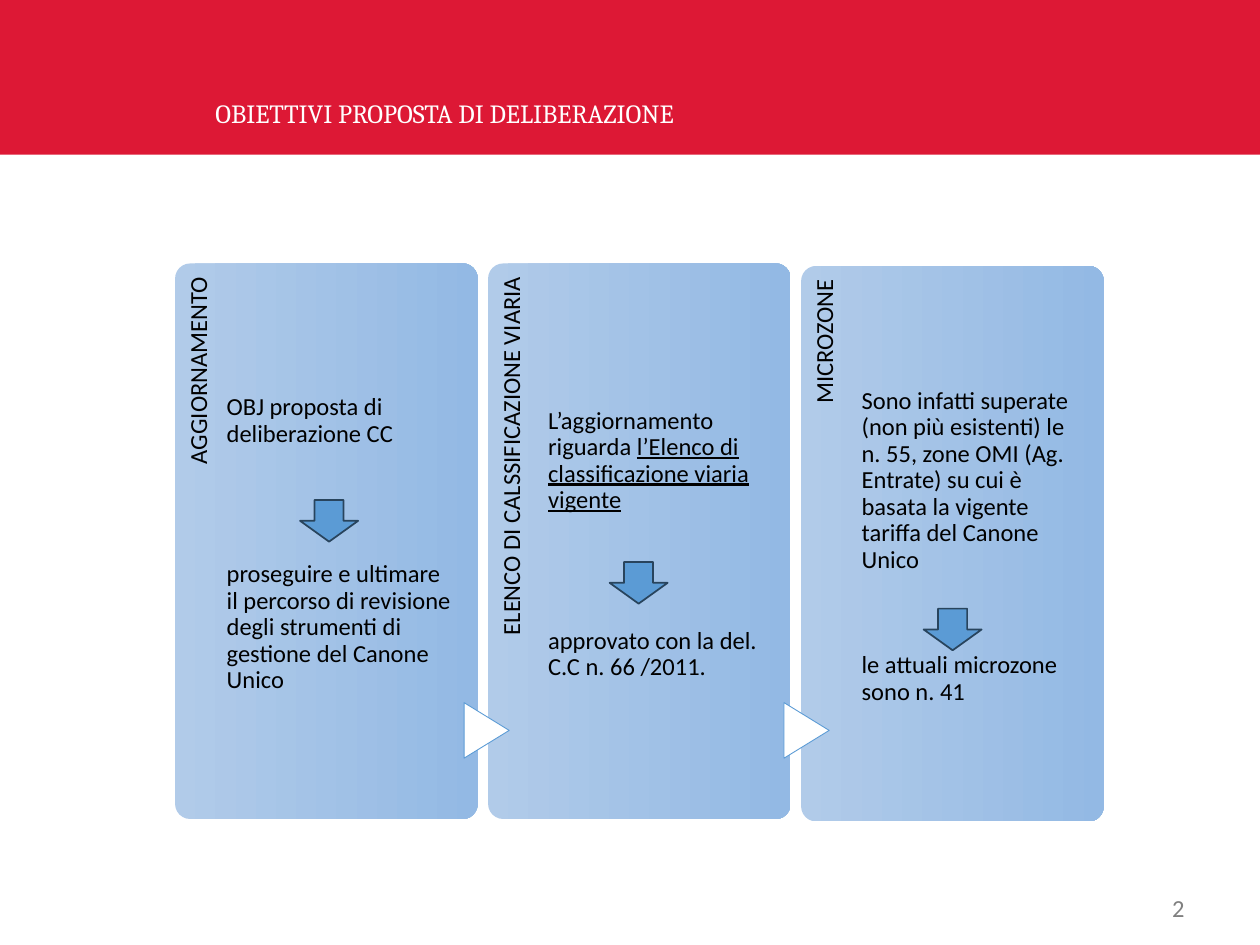
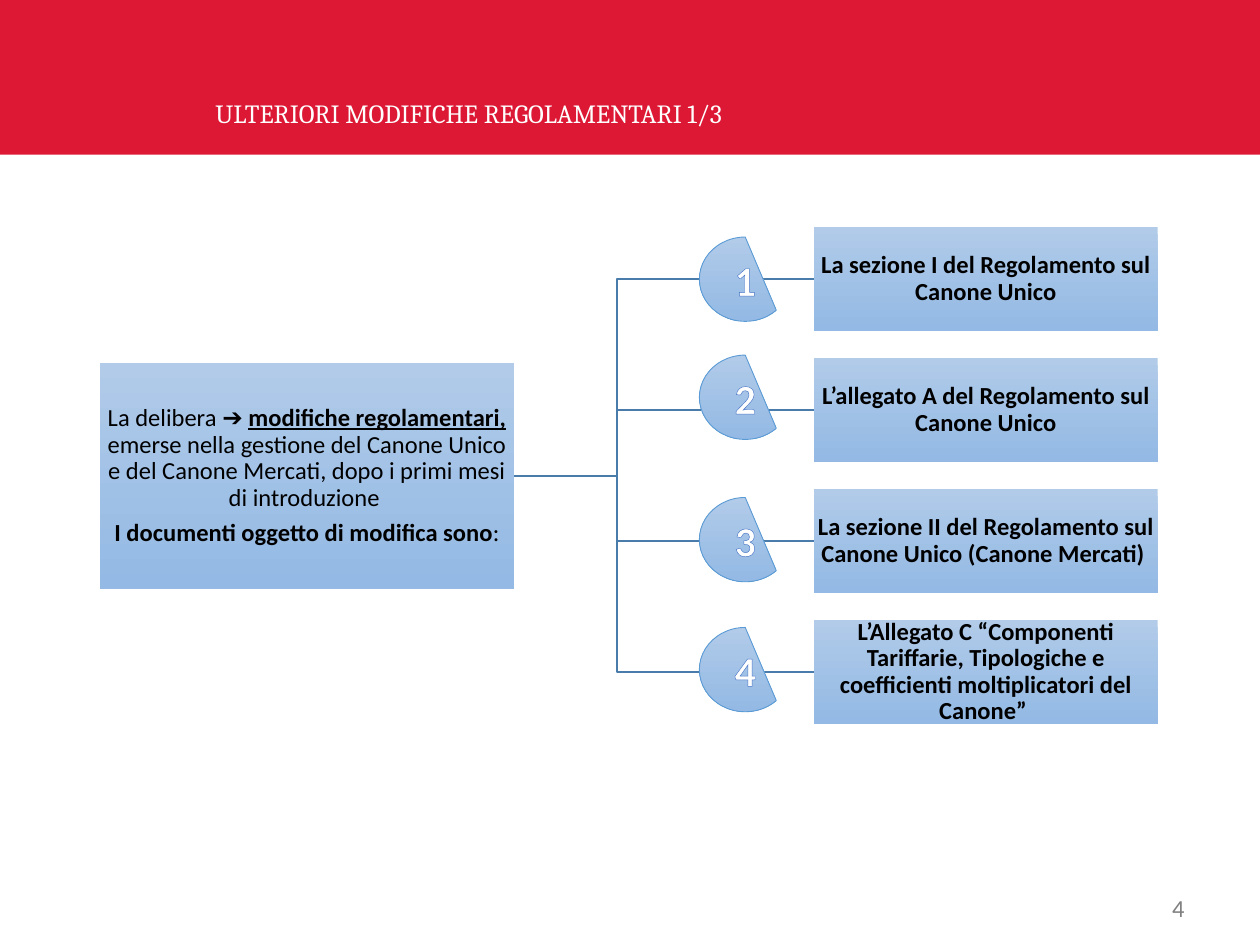
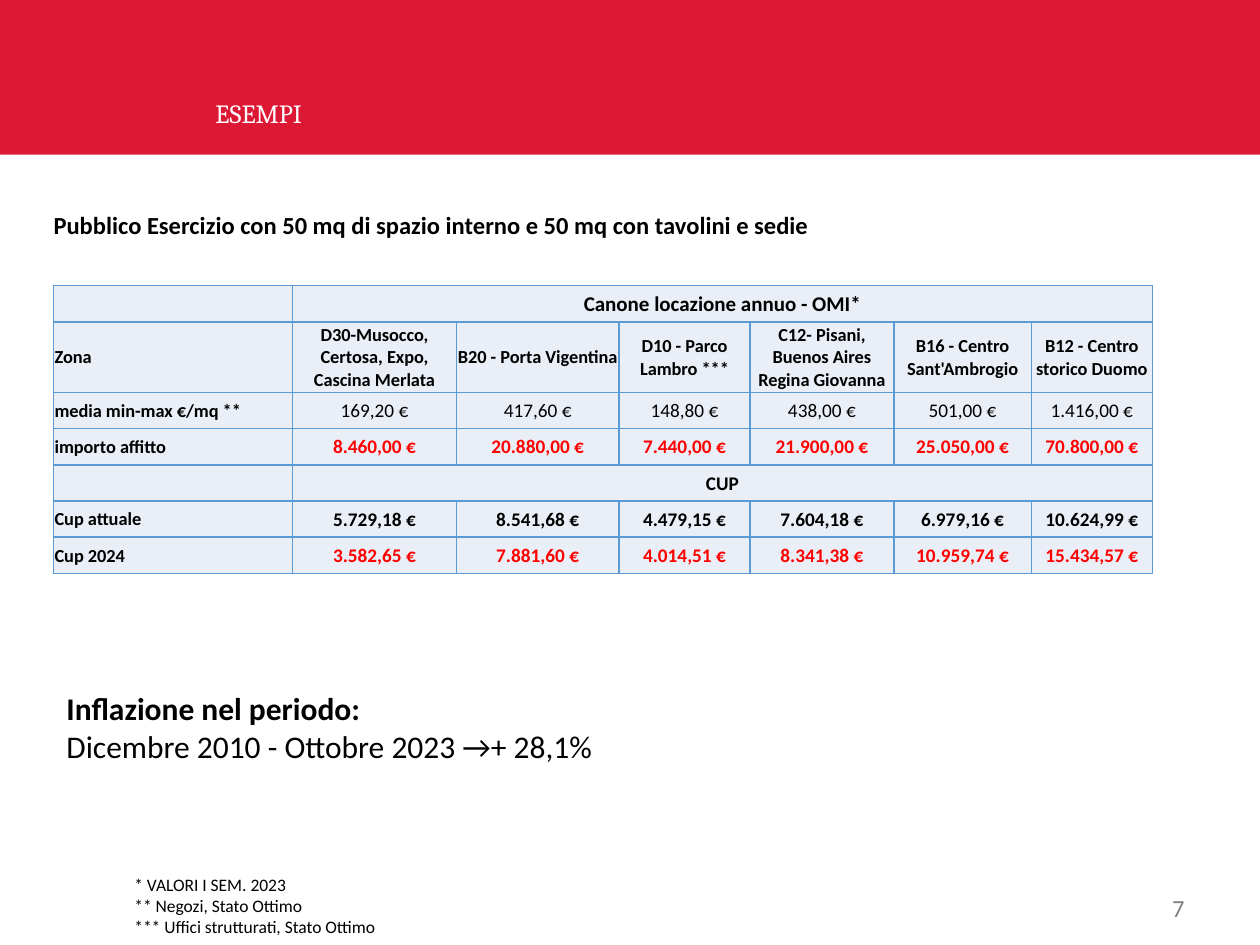
from dataclasses import dataclass, field
from typing import Any, NamedTuple

from lxml.etree import SubElement
from pptx import Presentation
from pptx.dml.color import RGBColor
from pptx.enum.shapes import MSO_CONNECTOR, MSO_SHAPE
from pptx.enum.text import MSO_ANCHOR, MSO_AUTO_SIZE, PP_ALIGN
from pptx.oxml import parse_xml
from pptx.oxml.ns import nsdecls, qn
from pptx.util import Cm, Pt

RED = RGBColor(0xDD, 0x18, 0x35)
ALERT = RGBColor(0xFF, 0x00, 0x00)
WHITE = RGBColor(0xFF, 0xFF, 0xFF)
BLACK = RGBColor(0x00, 0x00, 0x00)
GREY = RGBColor(0x80, 0x80, 0x80)
BLUE = RGBColor(0x5B, 0x9B, 0xD5)
NAVY = RGBColor(0x28, 0x44, 0x5D)
STEEL = RGBColor(0x49, 0x7C, 0xAB)
PALE = RGBColor(0xEA, 0xEF, 0xF7)
LIGHT = RGBColor(0xB1, 0xCB, 0xE9)
DEEP = RGBColor(0x93, 0xB9, 0xE4)
RIM = RGBColor(0x44, 0x72, 0xC4)

LINE = 15.2  # height in points of one 14 pt line at 0.9 spacing
GAP = 4.9    # points between paragraphs in the diagrams
BOLD = {"bold": True}

Runs = list[tuple[str, dict[str, Any]]]


class Box(NamedTuple):
    """A frame in centimetres."""
    x: float
    y: float
    w: float
    h: float

    def cm(self) -> tuple[Cm, ...]:
        return tuple(Cm(side) for side in self)


@dataclass
class Panel:
    name: str
    top: float
    left: float
    head: Runs
    tail: str
    blanks: int
    arrow: tuple[float, float]


@dataclass
class Branch:
    text: str
    top: float


@dataclass
class Row:
    label: str
    cells: list[str]
    form: dict[str, Any] = field(default_factory=dict)
    high: float = 0.73


PANELS = [
    Panel("AGGIORNAMENTO", 5.31, 4.57,
          [("OBJ proposta di deliberazione CC", {})],
          "proseguire e ultimare il percorso di revisione degli strumenti di "
          "gestione del Canone Unico", 3, (6.05, 10.08)),
    Panel("ELENCO DI CALSSIFICAZIONE VIARIA", 5.31, 11.05,
          [("L’aggiornamento riguarda ", {}),
           ("l’Elenco di classificazione viaria vigente", {"underline": True})],
          "approvato con la del. C.C n. 66 /2011.", 3, (12.29, 11.33)),
    Panel("MICROZONE", 5.36, 17.37,
          [("Sono infatti superate (non più esistenti) le n. 55, zone OMI "
            "(Ag. Entrate) su cui è basata la vigente tariffa del Canone Unico", {})],
          "le attuali microzone sono n. 41", 2, (18.62, 12.27)),
]

ROOT: list[Runs] = [
    [("La delibera ➔ ", {}),
     ("modifiche regolamentari,", {"bold": True, "underline": True}),
     (" emerse nella gestione del Canone Unico e del Canone Mercati, "
      "dopo i primi mesi di introduzione ", {})],
    [("I documenti oggetto di modifica sono", BOLD), (":", {})],
]

BRANCHES = [
    Branch("La sezione I del Regolamento sul Canone Unico", 4.78),
    Branch("L’allegato A del Regolamento sul Canone Unico", 7.16),
    Branch("La sezione II del Regolamento sul Canone Unico (Canone Mercati) ", 10.03),
    Branch("L’Allegato C “Componenti Tariffarie, Tipologiche e coefficienti "
           "moltiplicatori del Canone” ", 12.65),
]

HOT = {"size": Pt(11), "bold": True, "color": ALERT}
ROWS = [
    Row("", ["Canone locazione annuo - OMI*"], {"size": Pt(12), "bold": True}),
    Row("Zona", ["D30-Musocco, Certosa, Expo, Cascina Merlata", "B20 - Porta Vigentina",
                 "D10 - Parco Lambro ***", "C12- Pisani, Buenos Aires Regina Giovanna",
                 "B16 - Centro Sant'Ambrogio", "B12 - Centro storico Duomo"],
        {"size": Pt(10.5), "bold": True}, 1.42),
    Row("media min-max €/mq **", ["169,20 €", "417,60 €", "148,80 €", "438,00 €",
                                  "501,00 €", "1.416,00 €"], {"size": Pt(11)}),
    Row("importo affitto", ["8.460,00 €", "20.880,00 €", "7.440,00 €", "21.900,00 €",
                            "25.050,00 €", "70.800,00 €"], HOT),
    Row("", ["CUP"], {"size": Pt(11), "bold": True}),
    Row("Cup attuale", ["5.729,18 €", "8.541,68 €", "4.479,15 €", "7.604,18 €",
                        "6.979,16 €", "10.624,99 €"], {"size": Pt(11), "bold": True}),
    Row("Cup 2024", ["3.582,65 €", "7.881,60 €", "4.014,51 €", "8.341,38 €",
                     "10.959,74 €", "15.434,57 €"], HOT),
]
WIDTHS = [4.82, 3.3, 3.28, 2.64, 2.9, 2.77, 2.44]


def put(item: Any, values: dict[str, Any]) -> None:
    """Set attributes from a dict; a color goes to the item's color.rgb."""
    for key, value in values.items():
        if key == "color":
            item.color.rgb = value
        else:
            setattr(item, key, value)


def write(frame: Any, paras: list[Runs], form: dict[str, Any] | None = None,
          para: dict[str, Any] | None = None, gap: float = 0) -> None:
    """Fill a frame; gap is the space in points before each later paragraph."""
    base = {"name": "Calibri", "size": Pt(14), "color": BLACK} | (form or {})
    for num, runs in enumerate(paras):
        line = frame.add_paragraph() if num else frame.paragraphs[0]
        put(line, {"alignment": PP_ALIGN.LEFT} | (para or {}))
        if num and gap:
            line.space_before = Pt(gap)
        for text, extra in runs:
            run = line.add_run()
            run.text = text
            put(run.font, base | extra)


def inset(frame: Any, left: float, top: float, right: float, low: float) -> None:
    put(frame, {"margin_left": Cm(left), "margin_top": Cm(top),
                "margin_right": Cm(right), "margin_bottom": Cm(low)})


def label(slide: Any, box: Box, anchor: Any = MSO_ANCHOR.TOP) -> Any:
    """Add a wrapping text box and return its frame."""
    frame = slide.shapes.add_textbox(*box.cm()).text_frame
    put(frame, {"word_wrap": True, "vertical_anchor": anchor})
    return frame


def shape(slide: Any, kind: Any, box: Box, fill: RGBColor | None = None,
          edge: RGBColor | None = None, thick: float = 0.5) -> Any:
    """Add a preset shape; without a fill it gets the shared blue gradient."""
    item = slide.shapes.add_shape(kind, *box.cm())
    item.shadow.inherit = False
    if fill is None:
        item.fill.gradient()
        item.fill.gradient_angle = 270
        for stop, tint in zip(item.fill.gradient_stops, (LIGHT, DEEP)):
            stop.color.rgb = tint
    else:
        item.fill.solid()
        item.fill.fore_color.rgb = fill
    if edge is None:
        item.line.fill.background()
    else:
        put(item.line, {"color": edge, "width": Pt(thick)})
    return item


def start(deck: Any, title: str, page: int) -> Any:
    """Add a slide with its title and page number."""
    slide = deck.slides.add_slide(deck.slide_layouts[5])
    head = slide.shapes.title
    put(head, dict(zip(("left", "top", "width", "height"),
                       Box(4.09, 1.52, 16.79, 1.22).cm())))
    put(head.text_frame, {"vertical_anchor": MSO_ANCHOR.BOTTOM, "word_wrap": True,
                          "auto_size": MSO_AUTO_SIZE.NONE})
    write(head.text_frame, [[(title, {})]],
          {"name": "Cambria", "size": Pt(15), "color": WHITE}, {"line_spacing": 0.9})
    write(label(slide, Box(18.21, 17.93, 5.92, 0.74), MSO_ANCHOR.MIDDLE),
          [[(str(page), {})]], {"color": GREY}, {"alignment": PP_ALIGN.RIGHT})
    return slide


def add_band(deck: Any, slide: Any) -> None:
    """Place the red band on the shared layout, behind every title."""
    band = shape(slide, MSO_SHAPE.RECTANGLE, Box(0, 0, 25.4, 3.12), RED)
    deck.slide_layouts[5].shapes._spTree.insert(2, band._element)


def draw_panel(slide: Any, panel: Panel, left: float) -> None:
    wide, high = 6.1, 11.2
    turn = (high - wide) / 2
    card = shape(slide, MSO_SHAPE.ROUNDED_RECTANGLE,
                 Box(left - turn, panel.top + turn, high, wide))
    card.rotation = 270
    card.adjustments[0] = 0.05
    card.text_frame.vertical_anchor = MSO_ANCHOR.TOP
    inset(card.text_frame, 1.73, 0.13, 0.18, 4.37)
    write(card.text_frame, [[(panel.name, {})]],
          para={"alignment": PP_ALIGN.RIGHT, "line_spacing": 0.9})
    frame = label(slide, Box(panel.left, panel.top, 4.55, high), MSO_ANCHOR.MIDDLE)
    inset(frame, 0, 0.13, 0, 0)
    write(frame, [panel.head, [(panel.tail, {})]], para={"line_spacing": 0.9},
          gap=panel.blanks * LINE + (panel.blanks + 1) * GAP)


def draw_goals(slide: Any) -> None:
    for num, panel in enumerate(PANELS):
        draw_panel(slide, panel, 3.53 + 6.31 * num)
    for left in (9.25, 15.7):
        mark = shape(slide, MSO_SHAPE.FLOWCHART_EXTRACT,
                     Box(left, 14.27, 1.12, 0.91), WHITE, BLUE)
        mark.rotation = 90
    for panel in PANELS:
        shape(slide, MSO_SHAPE.DOWN_ARROW, Box(*panel.arrow, 1.17, 0.84), BLUE, NAVY, 1)


def draw_card(slide: Any, box: Box, paras: list[Runs]) -> None:
    frame = shape(slide, MSO_SHAPE.RECTANGLE, box).text_frame
    put(frame, {"word_wrap": True, "vertical_anchor": MSO_ANCHOR.MIDDLE})
    inset(frame, 0.03, 0.03, 0.03, 0.03)
    write(frame, paras, para={"alignment": PP_ALIGN.CENTER, "line_spacing": 0.9}, gap=GAP)


def draw_link(slide: Any, low: float, mid: float) -> None:
    """Join the root, whose card hides the start, to a branch at height mid."""
    link = slide.shapes.add_connector(MSO_CONNECTOR.ELBOW,
                                      Cm(8.46), Cm(low), Cm(16.41), Cm(mid))
    put(link.line, {"color": STEEL, "width": Pt(1)})
    SubElement(link._element.spPr, qn("a:effectLst"))


def draw_badge(slide: Any, num: int, top: float) -> None:
    frame = shape(slide, MSO_SHAPE.CHORD, Box(14.1, top, 1.85, 1.7), edge=BLUE).text_frame
    frame.vertical_anchor = MSO_ANCHOR.MIDDLE
    write(frame, [[(str(num), {})]], {"size": Pt(24), "bold": True, "color": WHITE},
          {"alignment": PP_ALIGN.CENTER})
    rim = parse_xml(f'<a:ln {nsdecls("a")} w="10160"><a:solidFill>'
                    f'<a:srgbClr val="{RIM}"/></a:solidFill></a:ln>')
    frame.paragraphs[0].runs[0]._r.get_or_add_rPr().insert(0, rim)


def draw_tree(slide: Any) -> None:
    cards = [Box(16.41, 4.57 + 2.64 * num, 6.93, 2.11) for num in range(len(BRANCHES))]
    root = Box(2.01, 7.32, 8.36, 4.55)
    for card in cards:
        draw_link(slide, root.y + root.h / 2, card.y + card.h / 2)
    draw_card(slide, root, ROOT)
    for card, branch in zip(cards, BRANCHES):
        draw_card(slide, card, [[(branch.text, BOLD)]])
    for num, branch in enumerate(BRANCHES, 1):
        draw_badge(slide, num, branch.top)


def style_cell(cell: Any) -> None:
    cell.fill.solid()
    cell.fill.fore_color.rgb = PALE
    cell.vertical_anchor = MSO_ANCHOR.MIDDLE
    inset(cell, 0.02, 0.02, 0.02, 0)
    props = cell._tc.get_or_add_tcPr()
    for spot, side in enumerate("LRTB"):
        props.insert(spot, parse_xml(
            f'<a:ln{side} {nsdecls("a")} w="12700"><a:solidFill>'
            f'<a:srgbClr val="{BLUE}"/></a:solidFill></a:ln{side}>'))
    cell.text_frame.paragraphs[0]._p.get_or_add_endParaRPr().set("sz", "1050")


def draw_table(slide: Any) -> None:
    box = Box(1.08, 5.76, sum(WIDTHS), sum(row.high for row in ROWS))
    grid = slide.shapes.add_table(len(ROWS), len(WIDTHS), *box.cm()).table
    put(grid, {"first_row": False, "horz_banding": False})
    for col, wide in zip(grid.columns, WIDTHS):
        col.width = Cm(wide)
    for cell in grid.iter_cells():
        style_cell(cell)
    for num, row in enumerate(ROWS):
        grid.rows[num].height = Cm(row.high)
        if row.label:
            write(grid.cell(num, 0).text_frame, [[(row.label, {})]],
                  {"size": Pt(10.5), "bold": True})
        if len(row.cells) == 1:
            grid.cell(num, 1).merge(grid.cell(num, len(WIDTHS) - 1))
        for col, text in enumerate(row.cells, 1):
            write(grid.cell(num, col).text_frame, [[(text, {})]], row.form,
                  {"alignment": PP_ALIGN.CENTER})


def draw_cases(slide: Any) -> None:
    draw_table(slide)
    write(label(slide, Box(2.46, 17.5, 12.7, 1.55)),
          [[("* VALORI I SEM. 2023", {})], [("** Negozi, Stato Ottimo", {})],
           [("*** Uffici strutturati, Stato Ottimo", {})]], {"size": Pt(10)})
    write(label(slide, Box(1.09, 13.77, 15.98, 1.8)),
          [[("Inflazione nel periodo:", BOLD)],
           [("Dicembre 2010 - Ottobre 2023 →+ 28,1%", {})]], {"size": Pt(18)})
    write(label(slide, Box(0.83, 4.11, 16.2, 0.86)),
          [[("Pubblico Esercizio con 50 mq di spazio interno e 50 mq con "
             "tavolini e sedie", BOLD)]])


def main() -> None:
    deck = Presentation()
    put(deck, {"slide_width": Cm(25.4), "slide_height": Cm(19.05)})
    goals = start(deck, "OBIETTIVI PROPOSTA DI DELIBERAZIONE", 2)
    add_band(deck, goals)
    draw_goals(goals)
    draw_tree(start(deck, "ULTERIORI MODIFICHE REGOLAMENTARI 1/3", 4))
    draw_cases(start(deck, "ESEMPI", 7))
    deck.save("out.pptx")


if __name__ == "__main__":
    main()
